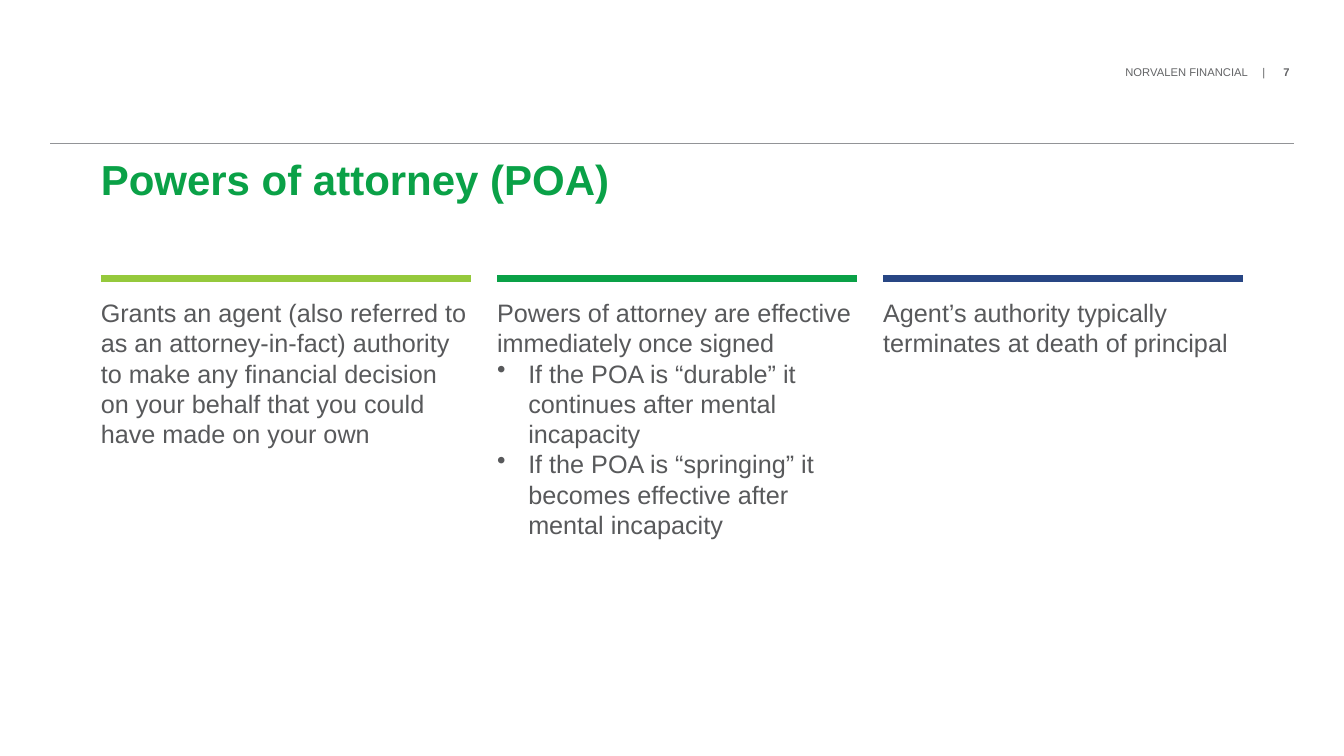
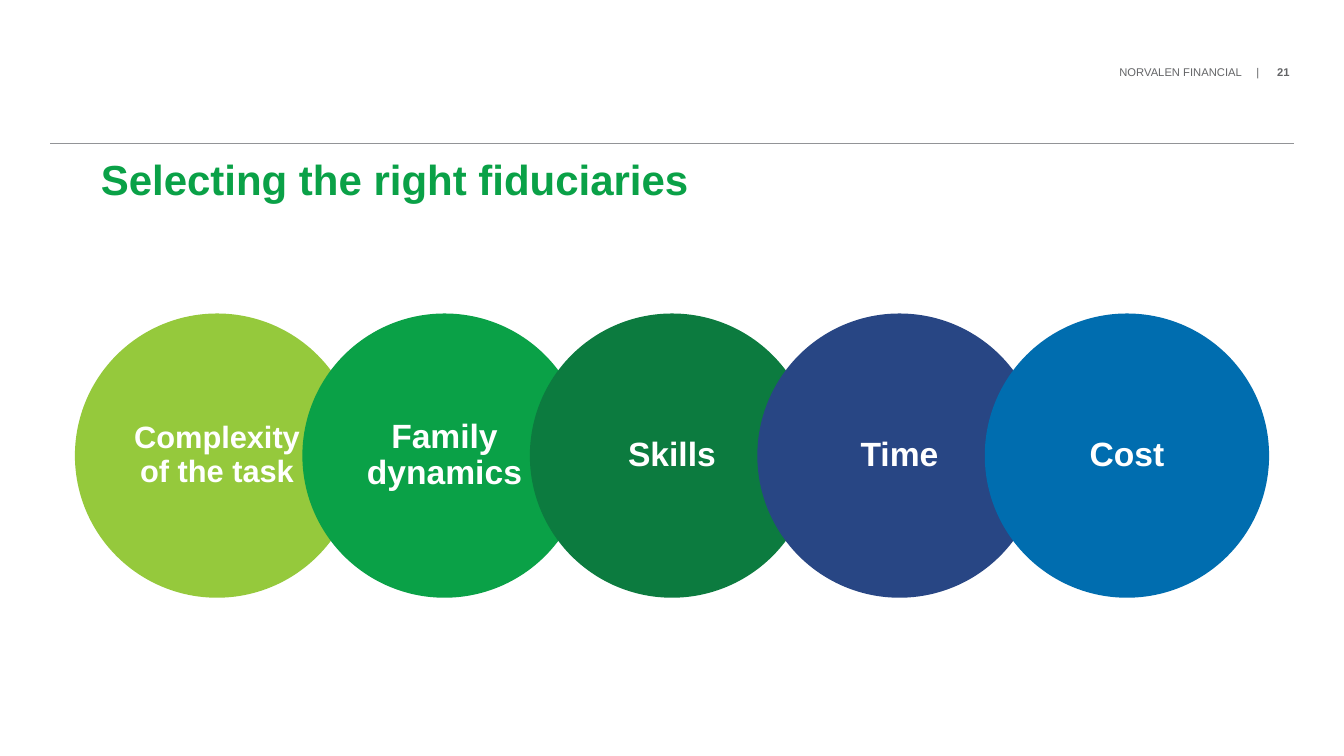
from lxml import etree
from pptx import Presentation
from pptx.dml.color import RGBColor
from pptx.enum.shapes import MSO_CONNECTOR, MSO_SHAPE
from pptx.enum.text import MSO_ANCHOR, MSO_AUTO_SIZE, PP_ALIGN
from pptx.oxml.ns import qn
from pptx.util import Inches, Pt

LINE, OVAL = MSO_CONNECTOR.STRAIGHT, MSO_SHAPE.OVAL
TOP, MID = MSO_ANCHOR.TOP, MSO_ANCHOR.MIDDLE
LEFT, MIDST, RIGHT = PP_ALIGN.LEFT, PP_ALIGN.CENTER, PP_ALIGN.RIGHT

WIDE, HIGH = 13.33, 7.5
FONT = "Arial"
WHITE, BODY, HEAD, RULE = "FFFFFF", "58595B", "636466", "929497"
LIME, GREEN, PINE, NAVY, BLUE = "95C93C", "0AA147", "0C7B3F", "284684", "006DAF"
FIRM = "NORVALEN FINANCIAL"

POWERS = [
    (3.67, LIME, ["Grants an agent (also referred to as an attorney-in-fact) authority "
                  "to make any financial decision on your behalf that you could have "
                  "made on your own"], []),
    (3.57, GREEN, ["Powers of attorney are effective immediately once signed"],
     ["If the POA is “durable” it continues after mental incapacity",
      "If the POA is “springing” it becomes effective after mental incapacity"]),
    (3.57, NAVY, ["Agent’s authority typically terminates at death of principal"], []),
]
TRAITS = [
    ("Complexity of the task", LIME, 22),
    ("Family dynamics", GREEN, 24),
    ("Skills", PINE, 24),
    ("Time", NAVY, 24),
    ("Cost", BLUE, 24),
]


def color(code):
    return RGBColor.from_string(code)


def write(shape, lines, points=(), size=18, tint=BODY, bold=False, align=LEFT,
          anchor=TOP, inset=(0, 0), lead=None):
    frame = shape.text_frame
    frame.word_wrap = True
    frame.auto_size = MSO_AUTO_SIZE.NONE
    frame.vertical_anchor = anchor
    frame.margin_left = frame.margin_right = Inches(inset[0])
    frame.margin_top = frame.margin_bottom = Inches(inset[1])
    for i, text in enumerate([*lines, *points]):
        para = frame.add_paragraph() if i else frame.paragraphs[0]
        para.alignment = align
        if lead:
            para.line_spacing = lead
        if i >= len(lines):
            props = para._p.get_or_add_pPr()
            props.set("marL", str(Inches(0.31)))
            props.set("indent", str(-Inches(0.31)))
            etree.SubElement(props, qn("a:buChar")).set("char", "•")
        run = para.add_run()
        run.text = text
        font = run.font
        font.name, font.size, font.bold = FONT, Pt(size), bold
        font.color.rgb = color(tint)


def label(slide, x, y, w, h, lines, points=(), **look):
    box = slide.shapes.add_textbox(Inches(x), Inches(y), Inches(w), Inches(h))
    write(box, lines, points, **look)


def bar(slide, x, y, w, tint, width):
    line = slide.shapes.add_connector(LINE, Inches(x), Inches(y), Inches(x + w), Inches(y))
    line.line.color.rgb = color(tint)
    line.line.width = Pt(width)
    etree.SubElement(line._element.spPr, qn("a:effectLst"))


def start(deck, title, page):
    slide = deck.slides.add_slide(deck.slide_layouts[5])
    shift = 0.06 * (len(page) - 1)
    for text, end, bold in ((FIRM, 12.38 - shift, False), ("|", 12.55 - shift, False),
                            (page, 12.79, True)):
        label(slide, end - 1.8, 0.65, 1.8, 0.15, [text], size=8, tint=HEAD,
              bold=bold, align=RIGHT)
    bar(slide, 0.5, 1.42, WIDE - 1, RULE, 0.5)
    head = slide.shapes.title
    head.left, head.top = Inches(1), Inches(1.58)
    head.width, head.height = Inches(WIDE - 2), Inches(1.05)
    write(head, [title], size=30, tint=GREEN, bold=True, lead=Pt(32))
    return slide


def powers(deck):
    slide = start(deck, "Powers of attorney (POA)", "7")
    x, gap = 1, 0.26
    for w, tint, lines, points in POWERS:
        label(slide, x, 2.95, w - 0.04, 1.79, lines, points)
        bar(slide, x, 2.76, w, tint, 5)
        x += w + gap


def traits(deck):
    slide = start(deck, "Selecting the right fiduciaries", "21")
    size = 2.82
    step = size * 0.8
    left = (WIDE - size - step * (len(TRAITS) - 1)) / 2
    for i, (text, tint, points) in enumerate(TRAITS):
        disc = slide.shapes.add_shape(OVAL, Inches(left + i * step), Inches(3.11),
                                      Inches(size), Inches(size))
        disc.shadow.inherit = False
        disc.fill.solid()
        disc.fill.fore_color.rgb = color(tint)
        disc.line.fill.background()
        write(disc, [text], size=points, tint=WHITE, bold=True, align=MIDST,
              anchor=MID, inset=(0.16, 0.03), lead=0.9)


def main():
    deck = Presentation()
    deck.slide_width, deck.slide_height = Inches(WIDE), Inches(HIGH)
    powers(deck)
    traits(deck)
    deck.save("out.pptx")


if __name__ == "__main__":
    main()
